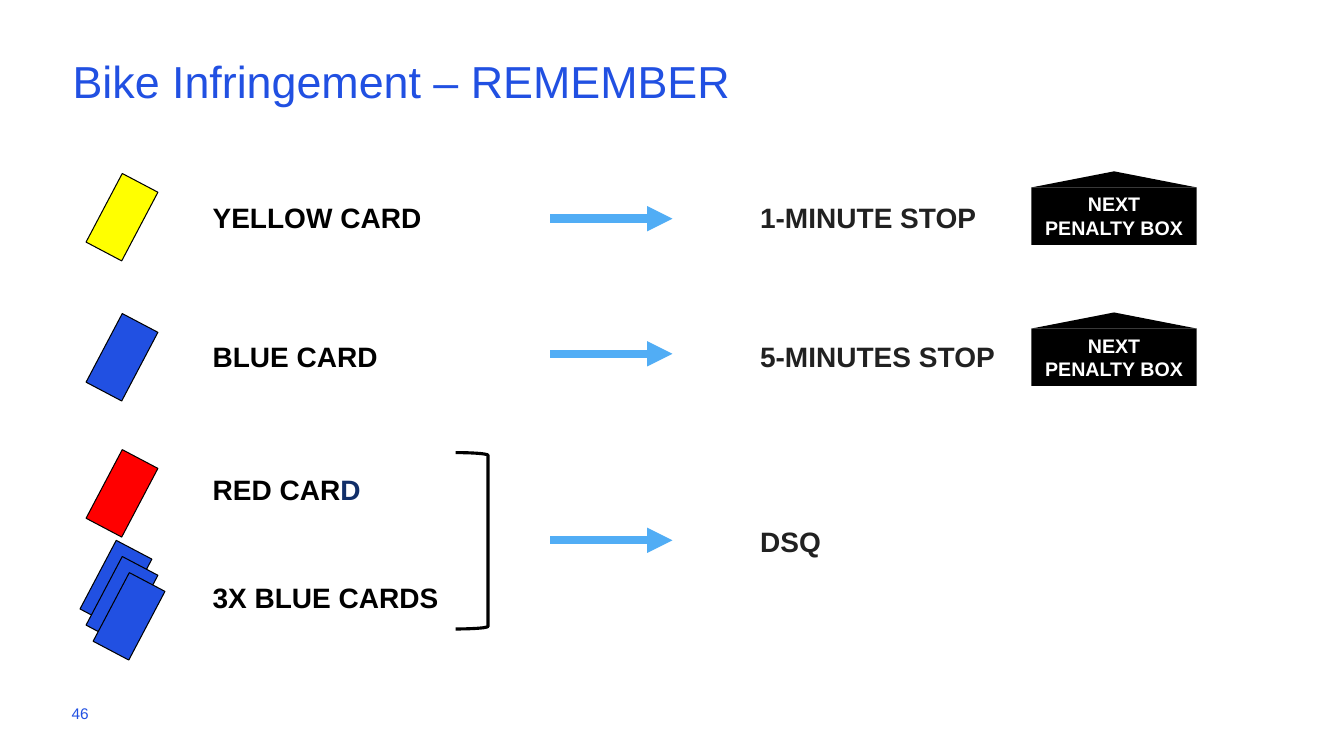
from dataclasses import dataclass

from lxml.etree import SubElement
from pptx import Presentation
from pptx.dml.color import RGBColor
from pptx.enum.shapes import MSO_CONNECTOR, MSO_SHAPE
from pptx.enum.text import MSO_ANCHOR as ANCHOR, PP_ALIGN as ALIGN
from pptx.oxml.ns import qn
from pptx.util import Emu, Pt

EMU_PER_PX = 9144
FONT = "Arial"
BLUE, YELLOW, RED = "2150E2", "FFFF00", "FF0000"
BLACK, WHITE, DARK, NAVY, SKY = "000000", "FFFFFF", "212121", "112E68", "51ADF5"
CARD_W, CARD_H, CARD_TILT = 40, 77, 27.8
LABEL_X, PENALTY_X, LABEL_H = 201, 744, 44
ARROW_X1, ARROW_X2 = 546, 667
SIGN_X, SIGN_W, ROOF_H, WALL_H = 1023, 164, 16, 57


@dataclass
class Card:
    x: int
    y: int
    color: str


@dataclass
class Label:
    x: int
    y: int
    w: int
    text: str
    color: str
    tail: str = ""


@dataclass
class Sign:
    y: int
    text: str


CARDS = [
    Card(101, 316, BLUE),
    Card(101, 177, YELLOW),
    Card(101, 451, RED),
    *[Card(95 + round(6.5 * i), 541 + 16 * i, BLUE) for i in range(3)],
]
LABELS = [
    Label(LABEL_X, 194, 279, "YELLOW CARD", BLACK),
    Label(LABEL_X, 332, 186, "BLUE CARD", BLACK),
    Label(LABEL_X, 464, 169, "RED CAR", BLACK, "D"),
    Label(LABEL_X, 571, 247, "3X BLUE CARDS", BLACK),
    Label(PENALTY_X, 194, 279, "1-MINUTE STOP", DARK),
    Label(PENALTY_X, 332, 254, "5-MINUTES STOP", DARK),
    Label(PENALTY_X, 515, 279, "DSQ", DARK),
]
SIGNS = [Sign(170, "NEXT\nPENALTY BOX"), Sign(310, "NEXT PENALTY BOX")]
ARROW_YS = [217, 351, 536]


def px(n: int) -> Emu:
    return Emu(n * EMU_PER_PX)


def rgb(color: str) -> RGBColor:
    return RGBColor.from_string(color)


def add_run(p, text: str, *, size: int, color: str, bold: bool = False) -> None:
    r = p.add_run()
    r.text = text
    r.font.name = FONT
    r.font.size = Pt(size)
    r.font.bold = bold
    r.font.color.rgb = rgb(color)


def write(tf, text: str, *, size: int, color: str, bold: bool = False,
          align=ALIGN.LEFT, anchor=ANCHOR.TOP, left: int = 10,
          spacing: float = 1.0) -> None:
    tf.word_wrap = True
    tf.vertical_anchor = anchor
    tf.margin_left = px(left)
    for i, line in enumerate(text.split("\n")):
        p = tf.add_paragraph() if i else tf.paragraphs[0]
        p.alignment = align
        p.line_spacing = spacing
        add_run(p, line, size=size, color=color, bold=bold)


def add_text(shapes, x: int, y: int, w: int, h: int, text: str, **style):
    s = shapes.add_textbox(px(x), px(y), px(w), px(h))
    write(s.text_frame, text, **style)
    return s


def add_figure(shapes, kind, x: int, y: int, w: int, h: int, *,
               fill: str = "", line: str = "", width: float = 0.75):
    s = shapes.add_shape(kind, px(x), px(y), px(w), px(h))
    s.shadow.inherit = False
    if fill:
        s.fill.solid()
        s.fill.fore_color.rgb = rgb(fill)
    else:
        s.fill.background()
    if line:
        s.line.color.rgb = rgb(line)
        s.line.width = Pt(width)
    else:
        s.line.fill.background()
    return s


def add_card(shapes, card: Card) -> None:
    s = add_figure(shapes, MSO_SHAPE.RECTANGLE, card.x, card.y, CARD_W, CARD_H,
                   fill=card.color, line=BLACK)
    s.rotation = CARD_TILT


def add_label(shapes, label: Label) -> None:
    s = add_text(shapes, label.x, label.y, label.w, LABEL_H, label.text,
                 size=20, color=label.color, bold=True)
    if label.tail:
        add_run(s.text_frame.paragraphs[0], label.tail, size=20, color=NAVY, bold=True)


def add_sign(shapes, sign: Sign) -> None:
    group = shapes.add_group_shape().shapes
    wall = add_figure(group, MSO_SHAPE.RECTANGLE, SIGN_X, sign.y + ROOF_H,
                      SIGN_W, WALL_H, fill=BLACK)
    write(wall.text_frame, sign.text, size=14, color=WHITE, bold=True, align=ALIGN.CENTER)
    add_figure(group, MSO_SHAPE.ISOSCELES_TRIANGLE, SIGN_X, sign.y, SIGN_W, ROOF_H, fill=BLACK)


def add_arrow(shapes, y: int) -> None:
    s = shapes.add_connector(MSO_CONNECTOR.STRAIGHT, px(ARROW_X1), px(y), px(ARROW_X2), px(y))
    s.line.color.rgb = rgb(SKY)
    s.line.width = Pt(6)
    SubElement(s.line._get_or_add_ln(), qn("a:tailEnd"), type="triangle")
    SubElement(s._element.spPr, qn("a:effectLst"))


def main() -> None:
    prs = Presentation()
    prs.slide_width, prs.slide_height = px(1333), px(750)
    shapes = prs.slides.add_slide(prs.slide_layouts[6]).shapes
    add_text(shapes, 72, 26, 1150, 114, "Bike Infringement – REMEMBER",
             size=32, color=BLUE, anchor=ANCHOR.MIDDLE, left=0, spacing=0.9)
    add_text(shapes, 71, 688, 300, 40, "46",
             size=11, color=BLUE, anchor=ANCHOR.MIDDLE, left=0)
    for card in CARDS:
        add_card(shapes, card)
    for label in LABELS:
        add_label(shapes, label)
    bracket = add_figure(shapes, MSO_SHAPE.RIGHT_BRACKET, 452, 449, 32, 175,
                         line=BLACK, width=2.25)
    bracket.adjustments[0] = 0.08
    for sign in SIGNS:
        add_sign(shapes, sign)
    for y in ARROW_YS:
        add_arrow(shapes, y)
    prs.save("out.pptx")


if __name__ == "__main__":
    main()
